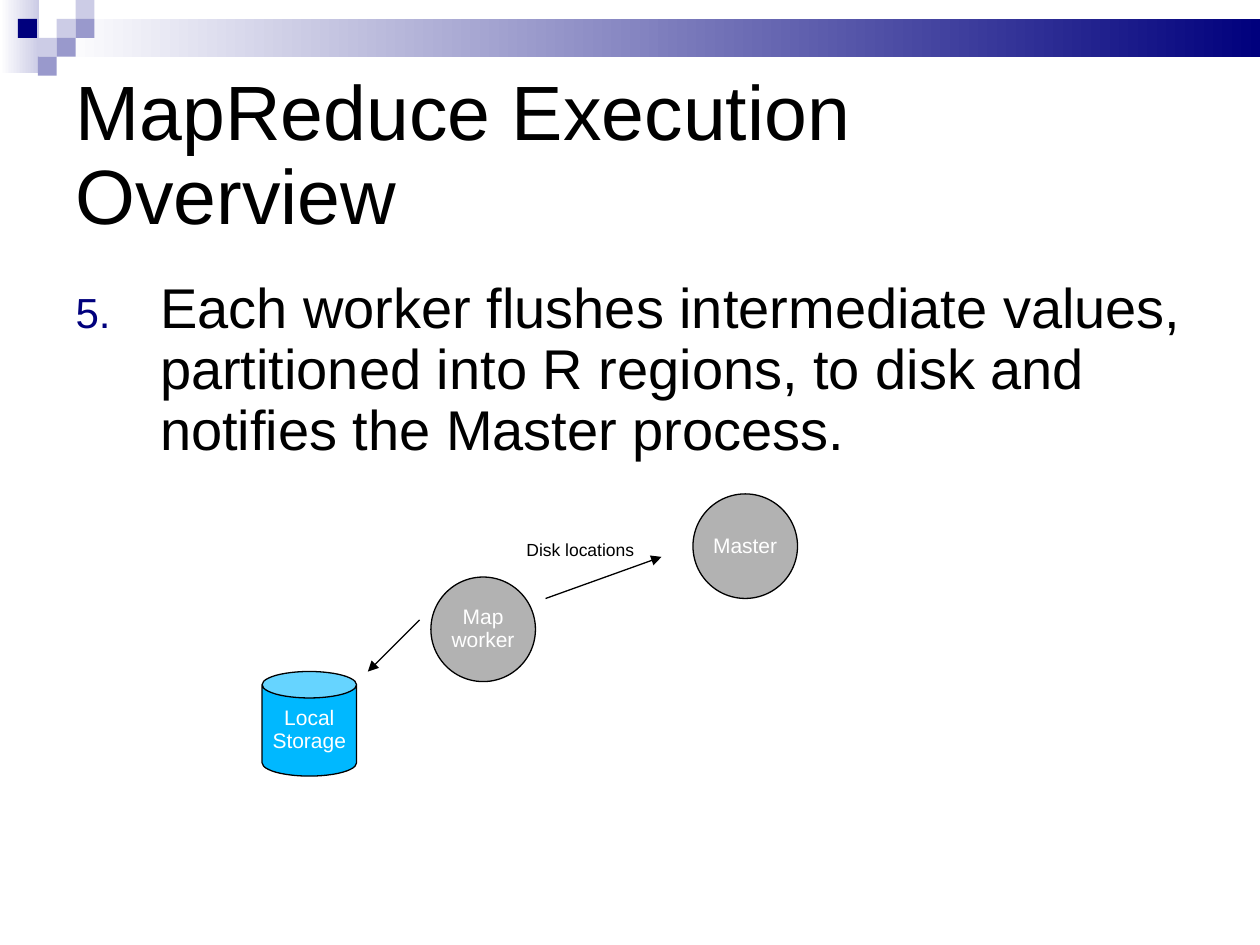
from pptx import Presentation, util as u
from pptx.dml.color import RGBColor
from pptx.enum import shapes, text
from pptx.oxml import parse_xml
from pptx.oxml.ns import nsdecls, qn
from lxml import etree

Inches, Pt = u.Inches, u.Pt
SHAPE, ALIGN, ANCHOR = shapes.MSO_SHAPE, text.PP_ALIGN, text.MSO_ANCHOR


def rgb(value):
    return RGBColor.from_string(value)


def write(sp, lines, size, color, align, **frame):
    tf = sp.text_frame
    tf.text = "\n".join(lines)
    for name, value in {"word_wrap": True, "auto_size": text.MSO_AUTO_SIZE.NONE, **frame}.items():
        setattr(tf, name, value)
    for p in tf.paragraphs:
        for name, value in {"alignment": align, "line_spacing": 0.91, "space_before": Pt(0)}.items():
            setattr(p, name, value)
        for name, value in {"size": Pt(size), "name": "Arial"}.items():
            setattr(p.runs[0].font, name, value)
        p.runs[0].font.color.rgb = rgb(color)
    return tf


prs = Presentation()
prs.slide_width, prs.slide_height = Inches(10), Inches(7.5)
s = prs.slides.add_slide(prs.slide_layouts[1])

bands = [(0, 0, 0.31, 0.58, "CCCCE6"), (0.45, 0.15, 9.55, 0.3, "00007D")]
for x, y, w, h, color in bands:
    sp = s.shapes.add_shape(SHAPE.RECTANGLE, Inches(x), Inches(y), Inches(w), Inches(h))
    sp.shadow.inherit = False
    sp.line.fill.background()
    sp.fill.gradient()
    sp.fill.gradient_angle = 180
    for stop, value in zip(sp.fill.gradient_stops, (color, "FFFFFF")):
        stop.color.rgb = rgb(value)

side = 0.15
squares = [(3, 1, "CCCCE6"), (4, 0, "CCCCE6"), (4, 1, "9999CC"), (2, 2, "CCCCE6"),
           (0.95, 1, "00007D"), (3, 2, "9999CC"), (2, 3, "9999CC")]
for col, row, color in squares:
    sp = s.shapes.add_shape(SHAPE.RECTANGLE, Inches(col * side), Inches(row * side),
                            Inches(side), Inches(side))
    sp.shadow.inherit = False
    sp.line.fill.background()
    sp.fill.solid()
    sp.fill.fore_color.rgb = rgb(color)

title, body = s.placeholders
for sp, top, height in [(title, 0.5, 1.5), (body, 2.17, 4.25)]:
    sp.left, sp.top, sp.width, sp.height = Inches(0.5), Inches(top), Inches(9), Inches(height)
write(title, ["MapReduce Execution Overview"], 44, "000000", ALIGN.LEFT,
      vertical_anchor=ANCHOR.MIDDLE)
tf = write(body, ["Each worker flushes intermediate values, partitioned into R regions, "
                  "to disk and notifies the Master process."], 32, "000000", ALIGN.LEFT,
           vertical_anchor=ANCHOR.TOP)
p = tf.paragraphs[0]
p.space_before = Pt(8)
pPr = p._p.get_or_add_pPr()
pPr.set("marL", str(Inches(0.67)))
pPr.set("indent", str(-Inches(0.67)))
for bullet in ('<a:buClr {}><a:srgbClr val="00007D"/></a:buClr>', '<a:buSzPct {} val="75000"/>',
               '<a:buFont {} typeface="Arial"/>',
               '<a:buAutoNum {} type="arabicPeriod" startAt="5"/>'):
    pPr.append(parse_xml(bullet.format(nsdecls("a"))))

nodes = [
    (SHAPE.OVAL, 5.5, 3.92, 0.83, "B2B2B2", ["Master"]),
    (SHAPE.OVAL, 3.42, 4.58, 0.83, "B2B2B2", ["Map", "worker"]),
    (SHAPE.CAN, 2.08, 5.33, 0.75, "00B8FF", ["Local", "Storage"]),
]
for kind, x, y, width, color, lines in nodes:
    sp = s.shapes.add_shape(kind, Inches(x), Inches(y), Inches(width), Inches(0.83))
    sp.shadow.inherit = False
    sp.fill.solid()
    sp.fill.fore_color.rgb = rgb(color)
    sp.line.color.rgb = rgb("000000")
    sp.line.width = Pt(0.75)
    if kind == SHAPE.CAN:
        sp.adjustments[0] = 0.28
    write(sp, lines, 12, "FFFFFF", ALIGN.CENTER, word_wrap=False, vertical_anchor=ANCHOR.MIDDLE)

arrows = [(4.33, 4.75, 5.25, 4.42), (3.33, 4.92, 2.92, 5.33)]
for ends in arrows:
    line = s.shapes.add_connector(shapes.MSO_CONNECTOR.STRAIGHT, *map(Inches, ends))
    line.line.color.rgb = rgb("000000")
    line.line.width = Pt(0.75)
    etree.SubElement(line.line._get_or_add_ln(), qn("a:tailEnd"), type="triangle")
    etree.SubElement(line._element.spPr, qn("a:effectLst"))

label = s.shapes.add_textbox(Inches(4.08), Inches(4.25), Inches(1.08), Inches(0.25))
write(label, ["Disk locations"], 10, "000000", ALIGN.LEFT,
      auto_size=text.MSO_AUTO_SIZE.SHAPE_TO_FIT_TEXT)

prs.save("out.pptx")
